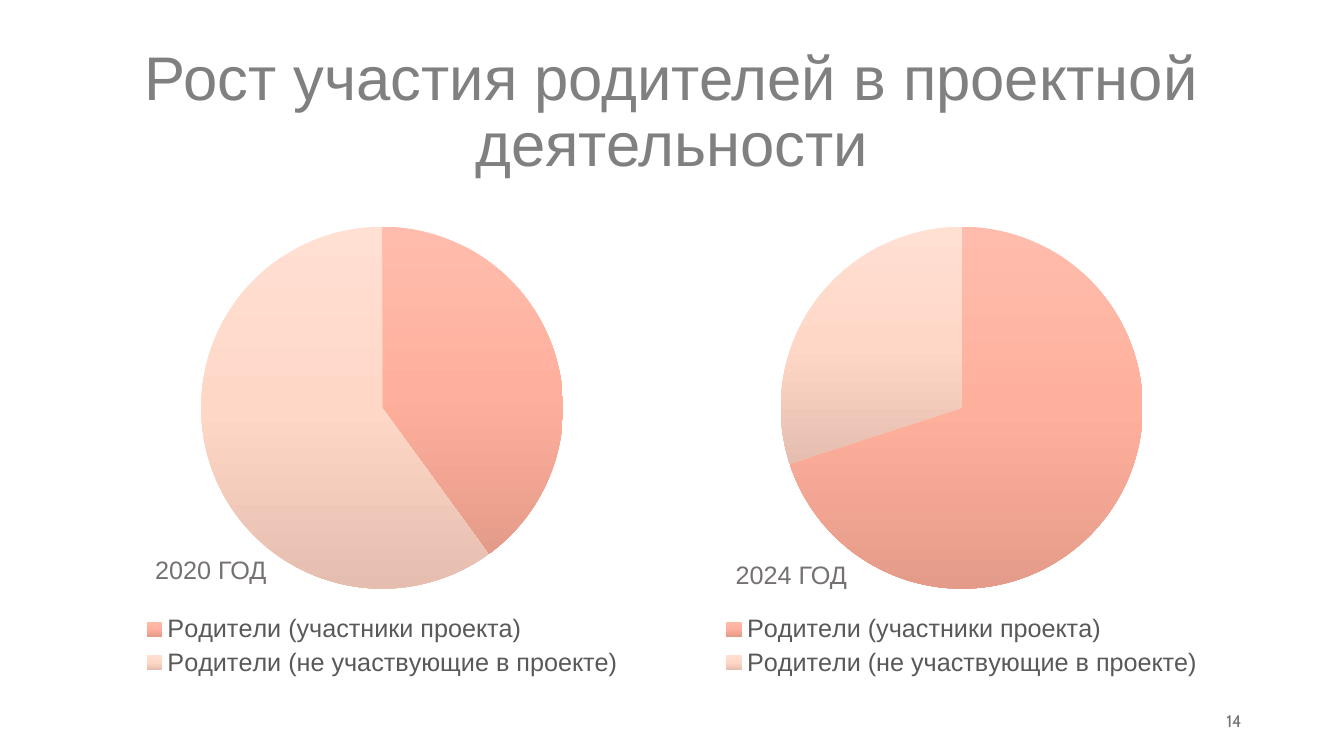
"""Slide with two pie charts on parents' participation in project work."""
from copy import deepcopy

from pptx import Presentation
from pptx import util as u
from pptx.chart.data import CategoryChartData
from pptx.dml.color import RGBColor
from pptx.enum import chart as charts, text
from pptx.oxml.ns import qn

COLORS = {"title": "808080", "label": "767171", "legend": "595959", "white": "FFFFFF"}
GRADIENTS = [("FFBCAC", "FFB09D", "E59B89"), ("FFE0D3", "FFD7C7", "E5BEAF")]
CATEGORIES = ["Родители (участники проекта)", "Родители (не участвующие в проекте)"]
LEFT, CHART_WIDTH = 66, 414


def write(box, words, size, color, font="Arial", align=text.PP_ALIGN.LEFT, spacing=None):
    frame = box.text_frame
    frame.word_wrap = True
    frame.auto_size = text.MSO_AUTO_SIZE.NONE
    frame.vertical_anchor = text.MSO_ANCHOR.MIDDLE
    para = frame.paragraphs[0]
    para.alignment = align
    para.line_spacing = spacing
    span = para.add_run()
    span.text = words
    span.font.name = font
    span.font.size = u.Pt(size)
    span.font.color.rgb = RGBColor.from_string(COLORS[color])


deck = Presentation()
deck.slide_width, deck.slide_height = u.Pt(960), u.Pt(540)
page = deck.slides.add_slide(deck.slide_layouts[5])
page.background.fill.solid()
page.background.fill.fore_color.rgb = RGBColor.from_string(COLORS["white"])

title = page.shapes.title
title.left, title.top = u.Pt(LEFT), u.Pt(28.8)
title.width, title.height = u.Pt(2 * CHART_WIDTH), u.Pt(104.4)
write(title, "Рост участия родителей в проектной деятельности", 44, "title",
      align=text.PP_ALIGN.CENTER, spacing=0.9)

for column, values in enumerate([(40, 60), (70, 30)]):
    data = CategoryChartData()
    data.categories = CATEGORIES
    data.add_series("Series 1", values)
    chart = page.shapes.add_chart(
        charts.XL_CHART_TYPE.PIE, u.Pt(LEFT + column * CHART_WIDTH), u.Pt(152),
        u.Pt(CHART_WIDTH), u.Pt(335), data).chart
    chart.has_title = False
    chart.font.name = "Cabin"
    chart.font.size = u.Pt(10)
    chart.has_legend = True
    legend = chart.legend
    legend.position = charts.XL_LEGEND_POSITION.BOTTOM
    legend.include_in_layout = False
    legend.font.name = "Arial"
    legend.font.size = u.Pt(18)
    legend.font.color.rgb = RGBColor.from_string(COLORS["legend"])

    plot = chart.plots[0]
    plot.vary_by_categories = True
    series = plot.series[0]
    slices = [series.points[index].format for index in range(len(values))]
    for pie_slice in slices:
        pie_slice.line.fill.background()
        pie_slice.fill.gradient()
        pie_slice.fill.gradient_angle = 270
    for stop_list in series._element.iter(qn("a:gsLst")):
        stop_list.append(deepcopy(stop_list[-1]))
    for pie_slice, gradient in zip(slices, GRADIENTS):
        for index, (stop, color) in enumerate(zip(pie_slice.fill.gradient_stops, gradient)):
            stop.position = index / 2
            stop.color.rgb = RGBColor.from_string(color)

labels = [
    ("2020 ГОД", (103.7, 393.8, 101, 26), 18, "Arial", text.PP_ALIGN.LEFT),
    ("2024 ГОД", (403.2, 395.6, 324, 28.8), 18, "Arial", text.PP_ALIGN.CENTER),
    ("14", (678, 500.5, 216, 28.8), 12, "Cabin", text.PP_ALIGN.RIGHT),
]
for words, place, size, font, align in labels:
    box = page.shapes.add_textbox(*map(u.Pt, place))
    write(box, words, size, "label", font=font, align=align)

deck.save("out.pptx")
